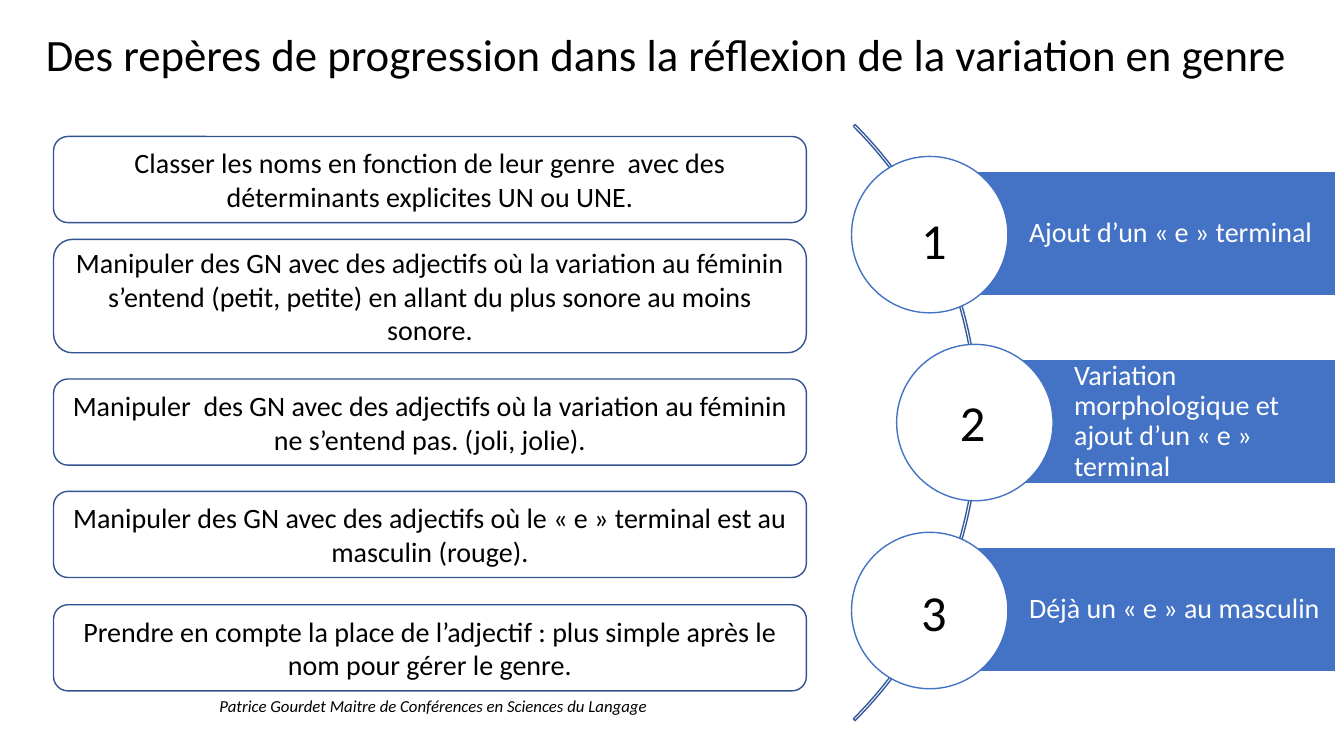
from dataclasses import dataclass

import pptx
import pptx.dml.color
import pptx.enum.shapes
import pptx.enum.text
import pptx.util

PX = 9525  # EMU per px, 96 px to the inch
SHAPES = pptx.enum.shapes.MSO_SHAPE
ALIGN = pptx.enum.text.PP_ALIGN
ANCHOR = pptx.enum.text.MSO_ANCHOR


@dataclass(frozen=True)
class Theme:
    font: str = "Calibri"
    ink: str = "000000"
    paper: str = "FFFFFF"
    blue: str = "4472C4"
    box_line: str = "325491"
    arc_line: str = "365B9D"
    title_size: int = 32
    body_size: int = 20
    number_size: int = 36
    credit_size: int = 12


@dataclass(frozen=True)
class Area:
    left: int
    top: int
    width: int
    height: int

    def emu(self) -> list[int]:
        return [side * PX for side in (self.left, self.top, self.width, self.height)]


@dataclass(frozen=True)
class Step:
    top: int
    height: int
    text: str


@dataclass(frozen=True)
class Level:
    circle_left: int
    number_left: int
    number_top: int
    text: str


THEME = Theme()
TITLE = "Des repères de progression dans la réflexion de la variation en genre"
CREDIT = "Patrice Gourdet Maitre de Conférences en Sciences du Langage "
STEPS = [
    Step(130, 82, "Classer les noms en fonction de leur genre  avec des déterminants explicites UN ou UNE."),
    Step(228, 108, "Manipuler des GN avec des adjectifs où la variation au féminin s’entend "
                   "(petit, petite) en allant du plus sonore au moins sonore."),
    Step(361, 82, "Manipuler  des GN avec des adjectifs où la variation au féminin ne s’entend pas. (joli, jolie)."),
    Step(468, 82, "Manipuler des GN avec des adjectifs où le « e » terminal est au masculin (rouge)."),
    Step(576, 82, "Prendre en compte la place de l’adjectif : plus simple après le nom pour gérer le genre."),
]
LEVELS = [
    Level(811, 852, 194, "Ajout d’un « e » terminal"),
    Level(854, 889, 368, "Variation morphologique et ajout d’un « e » terminal"),
    Level(811, 852, 549, "Déjà un « e » au masculin"),
]
LEVEL_TOP, LEVEL_PITCH = 149, 179
CIRCLE, BAR_HEIGHT, BAR_RIGHT = 149, 119, 1272


def color(value: str) -> pptx.dml.color.RGBColor:
    return pptx.dml.color.RGBColor.from_string(value)


def write(box, text: str, size: int, ink: str = THEME.ink, align=ALIGN.CENTER,
          anchor=ANCHOR.MIDDLE, spacing: float = 1.0, italic: bool = False) -> None:
    frame = box.text_frame
    frame.word_wrap = True
    frame.auto_size = pptx.enum.text.MSO_AUTO_SIZE.NONE
    frame.vertical_anchor = anchor
    para = frame.paragraphs[0]
    para.alignment = align
    para.line_spacing = spacing
    span = para.add_run()
    span.text = text
    span.font.name = THEME.font
    span.font.size = pptx.util.Pt(size)
    span.font.italic = italic
    span.font.color.rgb = color(ink)


def add_shape(page, kind, area: Area, line: str, fill: str | None = None):
    shape = page.shapes.add_shape(kind, *area.emu())
    shape.shadow.inherit = False
    if fill is None:
        shape.fill.background()
    else:
        shape.fill.solid()
        shape.fill.fore_color.rgb = color(fill)
    shape.line.color.rgb = color(line)
    shape.line.width = pptx.util.Pt(1)
    return shape


def add_label(page, area: Area, text: str, size: int, italic: bool = False) -> None:
    box = page.shapes.add_textbox(*area.emu())
    write(box, text, size, anchor=ANCHOR.TOP, italic=italic)


def add_level(page, index: int, level: Level) -> None:
    top = LEVEL_TOP + index * LEVEL_PITCH
    bar_left = level.circle_left + CIRCLE // 2
    bar_top = top + (CIRCLE - BAR_HEIGHT) // 2 - 1
    bar = add_shape(page, SHAPES.RECTANGLE,
                    Area(bar_left, bar_top, BAR_RIGHT - bar_left, BAR_HEIGHT),
                    THEME.paper, THEME.blue)
    frame = bar.text_frame
    frame.margin_left = 95 * PX
    frame.margin_top = frame.margin_right = frame.margin_bottom = 6 * PX
    write(bar, level.text, THEME.body_size, THEME.paper, ALIGN.LEFT, spacing=0.9)
    add_shape(page, SHAPES.OVAL, Area(level.circle_left, top, CIRCLE, CIRCLE),
              THEME.blue, THEME.paper)


def main() -> None:
    deck = pptx.Presentation()
    deck.slide_width, deck.slide_height = 1280 * PX, 720 * PX
    page = deck.slides.add_slide(deck.slide_layouts[5])

    # Title
    title = page.shapes.title
    title.left, title.top, title.width, title.height = Area(34, 12, 1212, 84).emu()
    write(title, TITLE, THEME.title_size, align=ALIGN.LEFT, spacing=0.9)

    # Teaching steps
    for step in STEPS:
        box = add_shape(page, SHAPES.ROUNDED_RECTANGLE,
                        Area(51, step.top, 717, step.height), THEME.box_line)
        write(box, step.text, THEME.body_size)

    # Arc with its three levels
    arc = add_shape(page, SHAPES.BLOCK_ARC, Area(129, 1, 803, 803), THEME.arc_line)
    for index, value in enumerate((189, 27, 0.003)):
        arc.adjustments[index] = value
    for index, level in enumerate(LEVELS):
        add_level(page, index, level)

    # Numbers and credit
    for number, level in enumerate(LEVELS, start=1):
        add_label(page, Area(level.number_left, level.number_top, 75, 68),
                  str(number), THEME.number_size)
    add_label(page, Area(84, 658, 661, 29), CREDIT, THEME.credit_size, italic=True)

    deck.save("out.pptx")


if __name__ == "__main__":
    main()
